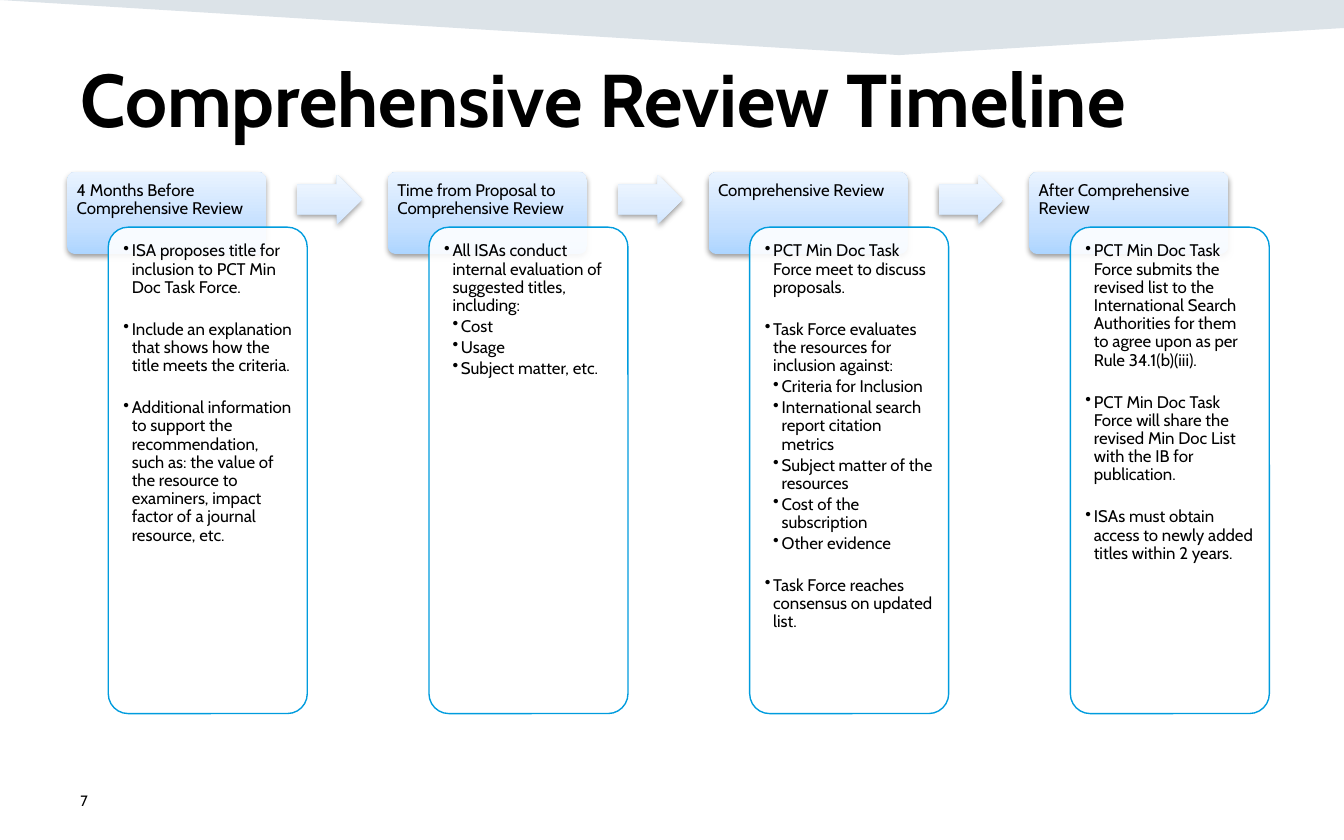
"""Build the Comprehensive Review Timeline slide."""
from copy import deepcopy

from lxml import etree
from pptx import Presentation
from pptx.dml import color
from pptx.enum import shapes, text
from pptx.oxml import ns
from pptx.util import Pt

TITLE = "Comprehensive Review Timeline"
PAGE = "7"
GROUP, ITEM, SUB = "group", "item", "sub"
STAGES = [
    ("4 Months Before Comprehensive Review", [
        (ITEM, "ISA proposes title for inclusion to PCT Min Doc Task Force."),
        (GROUP, "Include an explanation that shows how the title meets the criteria."),
        (GROUP, "Additional information to support the recommendation, such as: the value of "
                "the resource to examiners, impact factor of a journal resource, etc."),
    ]),
    ("Time from Proposal to Comprehensive Review", [
        (ITEM, "All ISAs conduct internal evaluation of suggested titles, including:"),
        (SUB, "Cost"),
        (SUB, "Usage"),
        (SUB, "Subject matter, etc."),
    ]),
    ("Comprehensive Review", [
        (ITEM, "PCT Min Doc Task Force meet to discuss proposals."),
        (GROUP, "Task Force evaluates the resources for inclusion against:"),
        (SUB, "Criteria for Inclusion"),
        (SUB, "International search report citation metrics"),
        (SUB, "Subject matter of the resources"),
        (SUB, "Cost of the subscription"),
        (SUB, "Other evidence"),
        (GROUP, "Task Force reaches consensus on updated list."),
    ]),
    ("After Comprehensive Review", [
        (ITEM, "PCT Min Doc Task Force submits the revised list to the International Search "
               "Authorities for them to agree upon as per Rule 34.1(b)(iii)."),
        (GROUP, "PCT Min Doc Task Force will share the revised Min Doc List with the IB "
                "for publication."),
        (GROUP, "ISAs must obtain access to newly added titles within 2 years."),
    ]),
]

THEME = {
    "font": "Cabin", "ink": "000000", "band": "164469", "card": "FFFFFF", "edge": "009CDE",
    "header": ("ADD5FF", "C5E0FF", "E9F3FF"), "arrow": ("D1E6FF", "DEEDFF", "F2F8FF"),
    "title_size": 40, "body_size": 9, "page_size": 8,
}
LEFT, STEP = 36, 171.8
HEADER = (0, 92.2, 106.6, 44)
CARD = (22, 121.7, 106.6, 260.6)
ARROW = (123.2, 93.6, 34.6, 26.6)
BAND = [(0, 0), (720, 0), (720, 15), (481.7, 29.5)]
SPACE = {ITEM: 1.5, SUB: 1.5, GROUP: 12.75}
INDENT = 4.5


def rgb(value):
    return color.RGBColor.from_string(value)


def fill_solid(shape, value, opacity):
    shape.fill.solid()
    shape.fill.fore_color.rgb = rgb(value)
    tint = shape.fill._xPr.find(".//" + ns.qn("a:srgbClr"))
    etree.SubElement(tint, ns.qn("a:alpha"), val=str(opacity * 1000))


def fill_gradient(shape, colours):
    shape.fill.gradient()
    shape.fill.gradient_angle = 90
    first = shape._element.spPr.find(".//" + ns.qn("a:gs"))
    first.addnext(deepcopy(first))
    for stop, value, position in zip(shape.fill.gradient_stops, colours, (0, 0.35, 1)):
        stop.color.rgb = rgb(value)
        stop.position = position


def cast_shadow(shape):
    effects = shape._element.spPr.find(ns.qn("a:effectLst"))
    shadow = etree.SubElement(effects, ns.qn("a:outerShdw"), blurRad=str(Pt(3.1)),
                              dist=str(Pt(1.6)), dir="5400000", rotWithShape="0")
    tint = etree.SubElement(shadow, ns.qn("a:srgbClr"), val=THEME["ink"])
    etree.SubElement(tint, ns.qn("a:alpha"), val="38000")


def set_frame(frame, insets, anchor=text.MSO_ANCHOR.TOP):
    frame.word_wrap = True
    frame.auto_size = text.MSO_AUTO_SIZE.NONE
    frame.vertical_anchor = anchor
    (frame.margin_left, frame.margin_top,
     frame.margin_right, frame.margin_bottom) = map(Pt, insets)


def write(paragraph, content, size, bold=False, spacing=1.0, before=0, level=0):
    if level:
        props = paragraph._p.get_or_add_pPr()
        props.set("marL", str(Pt(INDENT * level)))
        props.set("indent", str(-Pt(INDENT)))
        etree.SubElement(props, ns.qn("a:buChar"), char="•")
    paragraph.alignment = text.PP_ALIGN.LEFT
    paragraph.line_spacing = spacing
    paragraph.space_before = Pt(before)
    run = paragraph.add_run()
    run.text = content
    run.font.name, run.font.size, run.font.bold = THEME["font"], Pt(size), bold
    run.font.color.rgb = rgb(THEME["ink"])


def add_part(slide, kind, box, column, adjustments):
    left, top, width, height = box
    part = slide.shapes.add_shape(kind, Pt(LEFT + column * STEP + left), Pt(top),
                                  Pt(width), Pt(height))
    for index, value in enumerate(adjustments):
        part.adjustments[index] = value
    part.shadow.inherit = False
    part.line.fill.background()
    return part


def add_stage(slide, column, heading, items):
    rounded = shapes.MSO_SHAPE.ROUNDED_RECTANGLE
    header = add_part(slide, rounded, HEADER, column, [0.1])
    fill_gradient(header, THEME["header"])
    cast_shadow(header)
    set_frame(header.text_frame, (3.8, 3.8, 3.8, 2.5))
    write(header.text_frame.paragraphs[0], heading, THEME["body_size"], spacing=0.9)

    card = add_part(slide, rounded, CARD, column, [0.1])
    fill_solid(card, THEME["card"], 90)
    card.line.color.rgb = rgb(THEME["edge"])
    card.line.width = Pt(0.75)
    set_frame(card.text_frame, (5, 5, 5, 5))
    for index, (role, content) in enumerate(items):
        paragraph = card.text_frame.add_paragraph() if index else card.text_frame.paragraphs[0]
        write(paragraph, content, THEME["body_size"], spacing=0.9,
              before=SPACE[role] if index else 0, level=2 if role == SUB else 1)

    if column < len(STAGES) - 1:
        arrow = add_part(slide, shapes.MSO_SHAPE.RIGHT_ARROW, ARROW, column, [0.6, 0.5])
        fill_gradient(arrow, THEME["arrow"])
        cast_shadow(arrow)


def main():
    deck = Presentation()
    deck.slide_width, deck.slide_height = Pt(720), Pt(450)
    slide = deck.slides.add_slide(deck.slide_layouts[5])

    outline = slide.shapes.build_freeform(*map(Pt, BAND[0]))
    outline.add_line_segments([(Pt(x), Pt(y)) for x, y in BAND[1:]], close=True)
    band = outline.convert_to_shape()
    band.shadow.inherit = False
    band.line.fill.background()
    fill_solid(band, THEME["band"], 15)

    title = slide.shapes.title
    title.left, title.top, title.width, title.height = map(Pt, (36, 24.5, 648, 75))
    set_frame(title.text_frame, (7.2, 3.6, 7.2, 3.6))
    write(title.text_frame.paragraphs[0], TITLE, THEME["title_size"], bold=True)

    for column, (heading, items) in enumerate(STAGES):
        add_stage(slide, column, heading, items)

    page = slide.shapes.add_textbox(*map(Pt, (36, 417, 162, 24)))
    set_frame(page.text_frame, (7.2, 3.6, 7.2, 3.6), text.MSO_ANCHOR.MIDDLE)
    write(page.text_frame.paragraphs[0], PAGE, THEME["page_size"])

    deck.save("out.pptx")


if __name__ == "__main__":
    main()
